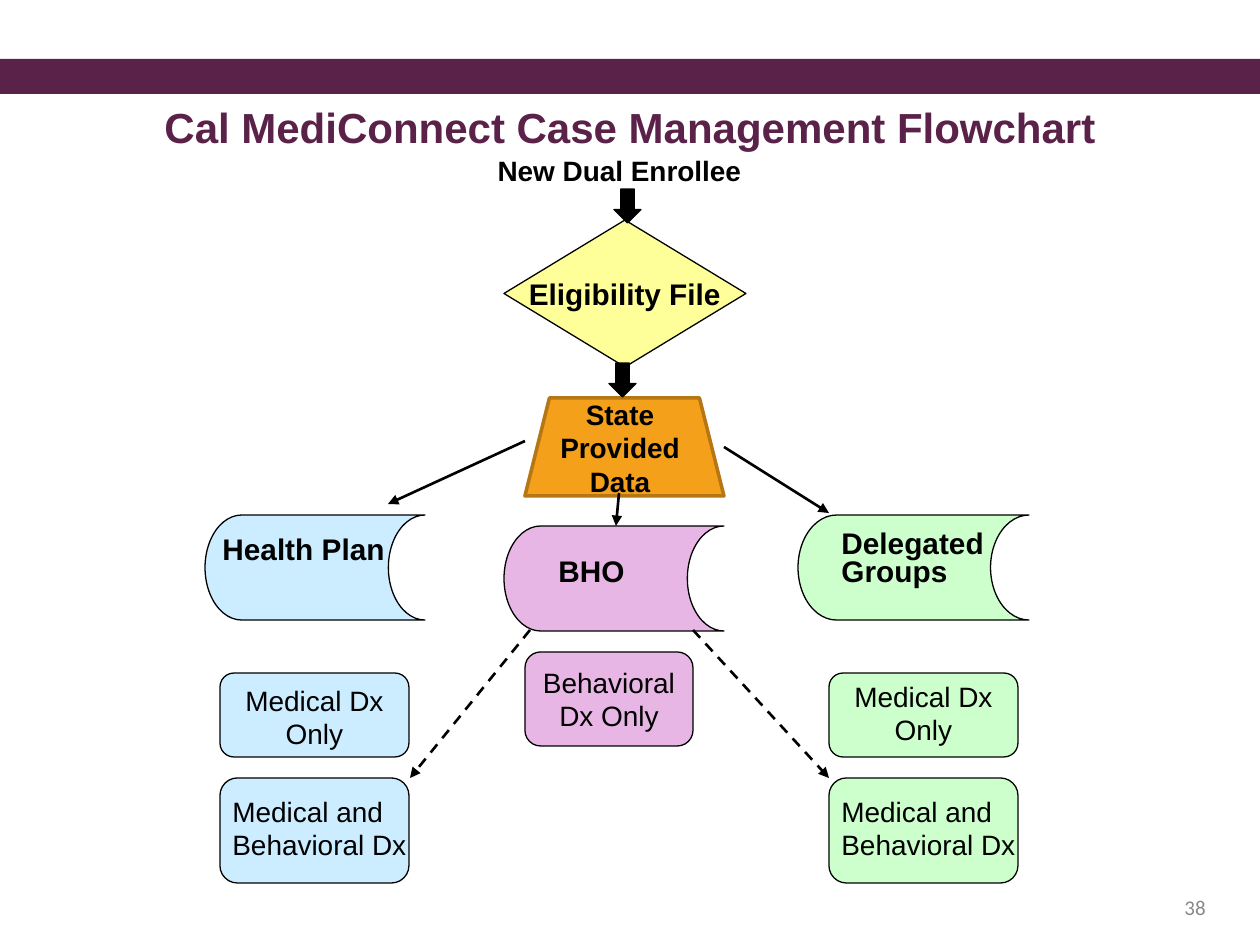
from lxml import etree
from pptx import Presentation, util as u
from pptx.dml.color import RGBColor
from pptx.enum import dml, shapes, text
from pptx.oxml.ns import qn

PX_PER_INCH = 126
PLUM = RGBColor(0x5A, 0x21, 0x49)
BLACK = RGBColor(0, 0, 0)
GRAY = RGBColor(0x89, 0x89, 0x89)
BLUE = RGBColor(0xCC, 0xEC, 0xFF)
GREEN = RGBColor(0xCC, 0xFF, 0xCC)
PINK = RGBColor(0xE8, 0xB6, 0xE4)
YELLOW = RGBColor(0xFF, 0xFF, 0x99)
ORANGE = RGBColor(0xF5, 0xA0, 0x1A)
BROWN = RGBColor(0xB5, 0x76, 0x13)

KIND = shapes.MSO_SHAPE
LEFT, CENTER, RIGHT = text.PP_ALIGN.LEFT, text.PP_ALIGN.CENTER, text.PP_ALIGN.RIGHT
TOP, MIDDLE = text.MSO_ANCHOR.TOP, text.MSO_ANCHOR.MIDDLE


def px(*lengths):
    return [round(length * u.Inches(1) / PX_PER_INCH) for length in lengths]


def write(box, lines, size, bold=False, color=BLACK, align=CENTER,
          font="Arial", anchor=TOP, wrap=True, spacing=None):
    frame = box.text_frame
    frame.word_wrap = wrap
    frame.vertical_anchor = anchor
    frame.text = lines
    for para in frame.paragraphs:
        para.alignment = align
        if spacing:
            para.line_spacing = spacing
        para.font.name = font
        para.font.size = u.Pt(size)
        para.font.bold = bold
        para.font.color.rgb = color


def add_label(page, place, lines, size, **style):
    write(page.shapes.add_textbox(*px(*place)), lines, size, **style)


def add_block(page, kind, place, fill, line=BLACK, width=0.75):
    block = page.shapes.add_shape(kind, *px(*place))
    block.shadow.inherit = False
    block.fill.solid()
    block.fill.fore_color.rgb = fill
    if line is None:
        block.line.fill.background()
    else:
        block.line.color.rgb = line
        block.line.width = u.Pt(width)
    return block


def add_arrow(page, start, end, dashed=False):
    arrow = page.shapes.add_connector(
        shapes.MSO_CONNECTOR.STRAIGHT, *px(*start, *end))
    arrow.line.color.rgb = BLACK
    arrow.line.width = u.Pt(1.5)
    if dashed:
        arrow.line.dash_style = dml.MSO_LINE.DASH
    properties = arrow.line._get_or_add_ln()
    etree.SubElement(properties, qn("a:tailEnd"), type="triangle")
    etree.SubElement(arrow._element.spPr, qn("a:effectLst"))


def add_down_arrow(page, left, top):
    add_block(page, KIND.DOWN_ARROW, (left, top, 27, 34), BLACK)


def main():
    deck = Presentation()
    deck.slide_width, deck.slide_height = px(1260, 945)
    page = deck.slides.add_slide(deck.slide_layouts[6])

    # Header band, title and page number
    add_block(page, KIND.RECTANGLE, (0, 59, 1260, 35), PLUM, line=None)
    add_label(page, (79, 95, 1102, 63),
              "Cal MediConnect Case Management Flowchart", 24,
              bold=True, color=PLUM)
    add_label(page, (924, 882, 294, 50), "38", 12, color=GRAY,
              align=RIGHT, font="Calibri", anchor=MIDDLE)

    # Enrollment and eligibility
    add_label(page, (462, 147, 315, 47), "New Dual Enrollee", 16, bold=True)
    diamond = add_block(page, KIND.FLOWCHART_DECISION,
                        (504, 220, 242, 147), YELLOW)
    write(diamond, "Eligibility File", 17, bold=True, anchor=MIDDLE, wrap=False)
    add_down_arrow(page, 614, 189)

    # State data
    add_block(page, KIND.TRAPEZOID, (525, 398, 199, 98), ORANGE, BROWN, 2)
    add_label(page, (528, 391, 184, 115), "State\nProvided\nData", 16, bold=True)
    add_down_arrow(page, 609, 363)

    # Plans that receive the data
    plans = [
        ((205, 515, 220, 105), BLUE, (210, 525, 210, 48), "Health Plan", None),
        ((504, 526, 220, 105), PINK, (546, 547, 158, 48), "BHO", None),
        ((798, 515, 231, 105), GREEN, (829, 525, 221, 69),
         "Delegated Groups", 0.8),
    ]
    for place, fill, label_place, name, spacing in plans:
        add_block(page, KIND.FLOWCHART_STORED_DATA, place, fill)
        add_label(page, label_place, name, 17, bold=True, align=LEFT,
                  spacing=spacing)

    # Diagnosis groups
    behavioral = add_block(page, KIND.FLOWCHART_ALTERNATE_PROCESS,
                           (525, 652, 168, 94), PINK)
    write(behavioral, "Behavioral\nDx Only", 16, anchor=MIDDLE, wrap=False)
    for left, fill, medical_top in ((220, BLUE, 677), (829, GREEN, 673)):
        for top, height in ((673, 84), (778, 105)):
            add_block(page, KIND.FLOWCHART_ALTERNATE_PROCESS,
                      (left, top, 189, height), fill)
        add_label(page, (left, medical_top, 189, 81), "Medical Dx Only", 16)
        add_label(page, (left, 788, 221, 81), "Medical and Behavioral Dx", 16,
                  align=LEFT)

    # Arrows from state data to plans, then from the middle plan outward
    add_arrow(page, (525, 441), (388, 504))
    add_arrow(page, (619, 493), (616, 526))
    add_arrow(page, (724, 447), (829, 513))
    add_arrow(page, (530, 630), (410, 778), dashed=True)
    add_arrow(page, (693, 630), (829, 778), dashed=True)

    deck.save("out.pptx")


if __name__ == "__main__":
    main()
